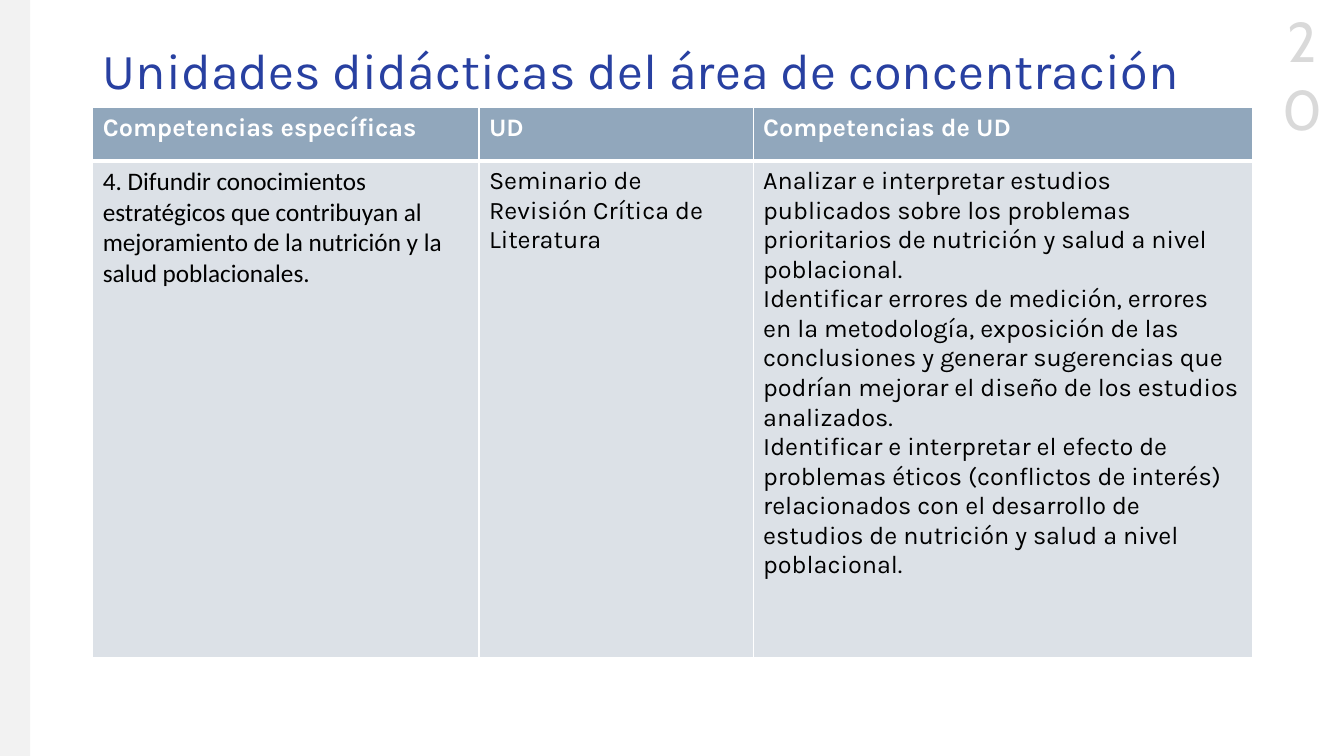
from dataclasses import dataclass

from lxml.etree import SubElement
from pptx import Presentation
from pptx.dml.color import RGBColor
from pptx.enum.shapes import MSO_SHAPE
from pptx.enum.text import MSO_ANCHOR, MSO_AUTO_SIZE, PP_ALIGN
from pptx.oxml.ns import qn
from pptx.util import Pt

PX = 9144
COLORS = {
    "band": "F2F2F2",
    "number": "D9D9D9",
    "title": "2840A1",
    "header": "91A7BC",
    "body": "DCE1E7",
    "white": "FFFFFF",
    "black": "000000",
}
FORMATS = {
    "number": {"name": "Cabin", "size": Pt(40), "bold": False},
    "title": {"name": "Karla", "size": Pt(36), "bold": False},
    "header": {"name": "Karla", "size": Pt(18), "bold": True},
    "body": {"name": "Karla", "size": Pt(18), "bold": False},
    "calibri": {"name": "Calibri", "size": Pt(18), "bold": False},
}
FRAME = {"word_wrap": True, "auto_size": MSO_AUTO_SIZE.NONE}


@dataclass(frozen=True)
class Box:
    left: int
    top: int
    width: int
    height: int

    def emu(self) -> tuple[int, ...]:
        return tuple(v * PX for v in (self.left, self.top, self.width, self.height))


@dataclass(frozen=True)
class Column:
    width: int
    heading: str
    paragraphs: tuple[str, ...]
    style: str = "body"


COLUMNS = (
    Column(383, "Competencias específicas", (
        "4. Difundir conocimientos estratégicos que contribuyan al mejoramiento "
        "de la nutrición y la salud poblacionales.",
    ), "calibri"),
    Column(272, "UD", ("Seminario de Revisión Crítica de Literatura",)),
    Column(495, "Competencias de UD", (
        "Analizar e interpretar estudios publicados sobre los problemas "
        "prioritarios de nutrición y salud a nivel poblacional.",
        "Identificar errores de medición, errores en la metodología, exposición "
        "de las conclusiones y generar sugerencias que podrían mejorar el diseño "
        "de los estudios analizados.",
        "Identificar e interpretar el efecto de problemas éticos (conflictos de "
        "interés) relacionados con el desarrollo de estudios de nutrición y salud "
        "a nivel poblacional.",
    )),
)
ROW_HEIGHTS = (53, 492)


def rgb(name: str) -> RGBColor:
    return RGBColor.from_string(COLORS[name])


def set_attributes(target, values: dict) -> None:
    for name, value in values.items():
        setattr(target, name, value)


def write(frame, paragraphs: tuple[str, ...], style: str, color: str) -> None:
    frame.text = "\n".join(paragraphs)
    for paragraph in frame.paragraphs:
        for run in paragraph.runs:
            set_attributes(run.font, FORMATS[style])
            run.font.color.rgb = rgb(color)


def set_borders(cell, widths: dict[str, int]) -> None:
    properties = cell._tc.get_or_add_tcPr()
    for side, points in widths.items():
        line = SubElement(properties, qn(f"a:ln{side}"), w=str(Pt(points)))
        fill = SubElement(line, qn("a:solidFill"))
        SubElement(fill, qn("a:srgbClr"), val=COLORS["white"])


def fill_cell(cell, paragraphs: tuple[str, ...], style: str, color: str,
              background: str, borders: dict[str, int]) -> None:
    write(cell.text_frame, paragraphs, style, color)
    set_borders(cell, borders)
    cell.fill.solid()
    cell.fill.fore_color.rgb = rgb(background)


def add_band(slide, box: Box) -> None:
    shape = slide.shapes.add_shape(MSO_SHAPE.RECTANGLE, *box.emu())
    shape.shadow.inherit = False
    shape.fill.solid()
    shape.fill.fore_color.rgb = rgb("band")
    shape.line.fill.background()


def add_number(slide, box: Box) -> None:
    frame = slide.shapes.add_textbox(*box.emu()).text_frame
    set_attributes(frame, FRAME)
    write(frame, ("20",), "number", "number")
    frame.paragraphs[0].alignment = PP_ALIGN.CENTER


def place_title(slide, box: Box) -> None:
    title = slide.shapes.title
    set_attributes(title, dict(zip(("left", "top", "width", "height"), box.emu())))
    frame = title.text_frame
    set_attributes(frame, FRAME | {"vertical_anchor": MSO_ANCHOR.MIDDLE})
    write(frame, ("Unidades didácticas del área de concentración",), "title", "title")
    set_attributes(frame.paragraphs[0], {"alignment": PP_ALIGN.LEFT, "line_spacing": 0.9})


def add_competence_table(slide, box: Box) -> None:
    table = slide.shapes.add_table(len(ROW_HEIGHTS), len(COLUMNS), *box.emu()).table
    for row, height in zip(table.rows, ROW_HEIGHTS):
        row.height = height * PX
    for index, column in enumerate(COLUMNS):
        table.columns[index].width = column.width * PX
        fill_cell(table.cell(0, index), (column.heading,), "header", "white",
                  "header", {"L": 1, "R": 1, "T": 1, "B": 3})
        fill_cell(table.cell(1, index), column.paragraphs, column.style, "black",
                  "body", {"L": 1, "R": 1, "T": 3, "B": 1})


def main() -> None:
    presentation = Presentation()
    presentation.slide_width = 1333 * PX
    presentation.slide_height = 750 * PX
    slide = presentation.slides.add_slide(presentation.slide_layouts[5])
    add_number(slide, Box(1254, 2, 75, 77))
    add_band(slide, Box(0, 0, 30, 750))
    place_title(slide, Box(92, 40, 1150, 66))
    add_competence_table(slide, Box(92, 107, 1150, sum(ROW_HEIGHTS)))
    presentation.save("out.pptx")


if __name__ == "__main__":
    main()
